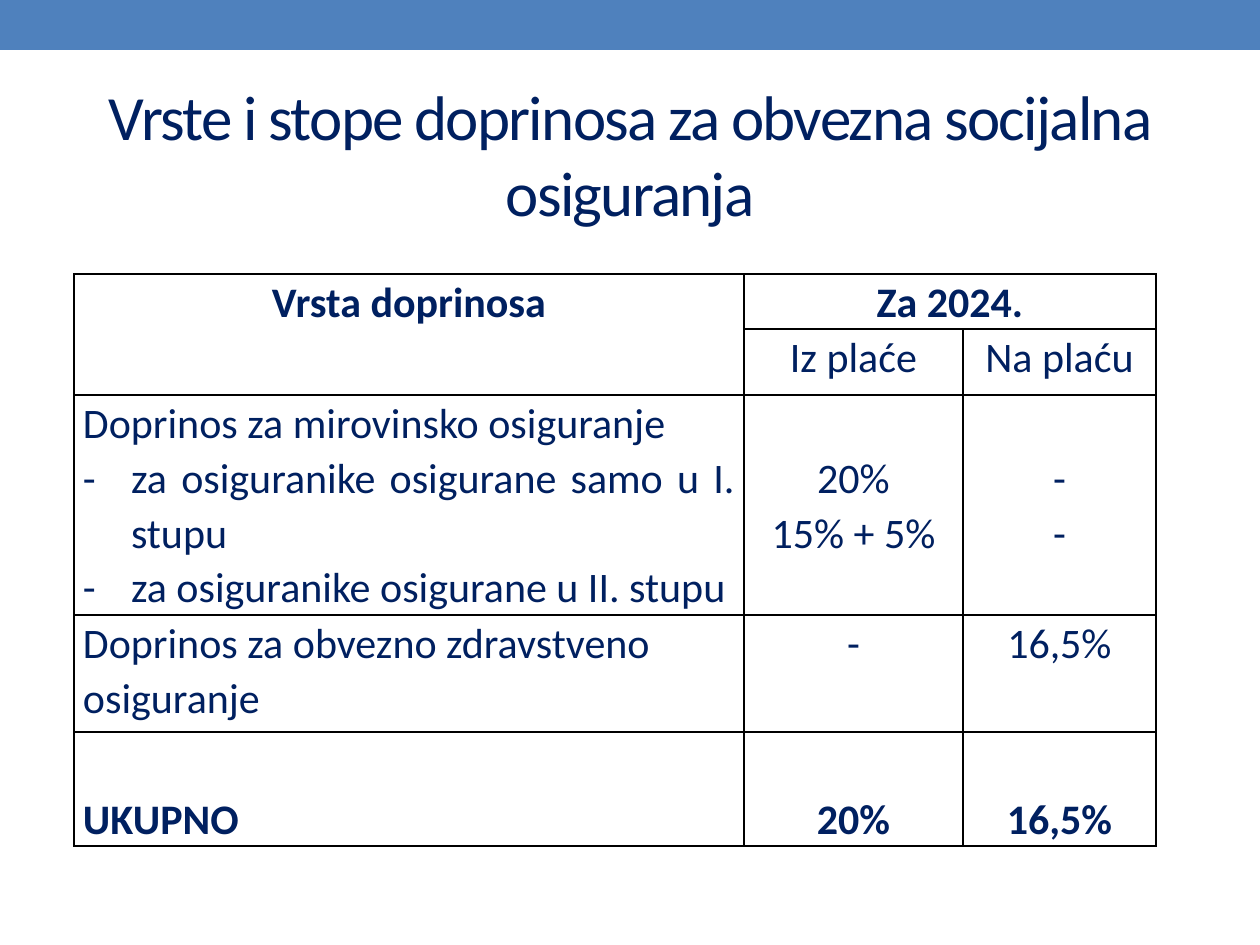
from dataclasses import dataclass

from lxml.etree import SubElement
from pptx import Presentation
from pptx.dml.color import RGBColor
from pptx.enum.shapes import MSO_SHAPE
from pptx.enum.text import MSO_ANCHOR, MSO_AUTO_SIZE, PP_ALIGN
from pptx.oxml.ns import qn
from pptx.util import Pt

PX = 914400 // 126
BULLET_INDENT = 48
LINE = 55


@dataclass(frozen=True)
class Theme:
    font: str = "Calibri"
    ink: str = "002060"
    accent: str = "4F81BD"
    border: str = "000000"
    title_size: int = 36
    table_size: int = 24
    line_spacing: float = 1.07


@dataclass(frozen=True)
class Entry:
    lines: tuple
    bold: bool = False
    align: PP_ALIGN = PP_ALIGN.CENTER
    bulleted_from: int = 99
    top: int = 0
    anchor: MSO_ANCHOR = MSO_ANCHOR.TOP


class SlideBuilder:
    def __init__(self, slide, theme):
        self.slide = slide
        self.theme = theme

    def style(self, paragraph, size, bold=False):
        font = paragraph.font
        font.name = self.theme.font
        font.size = Pt(size)
        font.bold = bold
        font.color.rgb = RGBColor.from_string(self.theme.ink)

    def band(self, left, top, width, height):
        band = self.slide.shapes.add_shape(
            MSO_SHAPE.RECTANGLE, left * PX, top * PX, width * PX, height * PX)
        band.shadow.inherit = False
        band.fill.solid()
        band.fill.fore_color.rgb = RGBColor.from_string(self.theme.accent)
        band.line.fill.background()

    def title(self, text, left, top, width, height):
        title = self.slide.shapes.title
        title.left, title.top = left * PX, top * PX
        title.width, title.height = width * PX, height * PX
        frame = title.text_frame
        frame.text = text
        frame.word_wrap = True
        frame.auto_size = MSO_AUTO_SIZE.NONE
        frame.vertical_anchor = MSO_ANCHOR.MIDDLE
        heading = frame.paragraphs[0]
        heading.alignment = PP_ALIGN.CENTER
        self.style(heading, self.theme.title_size)
        heading._p.pPr.find(qn("a:defRPr")).set("spc", "-100")

    def bullet(self, paragraph):
        properties = paragraph._p.get_or_add_pPr()
        properties.set("marL", str(BULLET_INDENT * PX))
        properties.set("indent", str(-BULLET_INDENT * PX))
        SubElement(properties, qn("a:buFont"), typeface=self.theme.font)
        SubElement(properties, qn("a:buChar"), char="-")

    def borders(self, cell):
        properties = cell._tc.get_or_add_tcPr()
        for side in ("lnL", "lnR", "lnT", "lnB"):
            edge = SubElement(properties, qn(f"a:{side}"), w=str(Pt(1)))
            fill = SubElement(edge, qn("a:solidFill"))
            SubElement(fill, qn("a:srgbClr"), val=self.theme.border)

    def fill_cell(self, cell, entry):
        cell.margin_left = cell.margin_right = 9 * PX
        cell.margin_top, cell.margin_bottom = entry.top * PX, 0
        cell.vertical_anchor = entry.anchor
        frame = cell.text_frame
        for index, line in enumerate(entry.lines):
            paragraph = frame.add_paragraph() if index else frame.paragraphs[0]
            paragraph.text = line
            paragraph.alignment = entry.align
            if index >= entry.bulleted_from:
                self.bullet(paragraph)
                paragraph.alignment = PP_ALIGN.JUSTIFY
            paragraph.line_spacing = self.theme.line_spacing
            self.style(paragraph, self.theme.table_size, entry.bold)

    def table(self, left, top, columns, heights, rows, merges):
        table = self.slide.shapes.add_table(
            len(heights), len(columns), left * PX, top * PX,
            sum(columns) * PX, sum(heights) * PX).table
        table.first_row = table.horz_banding = False
        for column, width in zip(table.columns, columns):
            column.width = width * PX
        for row, height in zip(table.rows, heights):
            row.height = height * PX
        for r, entries in enumerate(rows):
            for c, entry in enumerate(entries):
                cell = table.cell(r, c)
                self.borders(cell)
                cell.fill.background()
                if entry:
                    self.fill_cell(cell, entry)
        for start, end in merges:
            table.cell(*start).merge(table.cell(*end))


def total(text, align=PP_ALIGN.CENTER):
    return Entry((text,), bold=True, align=align, anchor=MSO_ANCHOR.BOTTOM)


def main():
    presentation = Presentation()
    presentation.slide_width, presentation.slide_height = 1260 * PX, 945 * PX
    slide = presentation.slides.add_slide(presentation.slide_layouts[5])
    builder = SlideBuilder(slide, Theme())
    builder.band(0, 0, 1260, 50)
    builder.title("Vrste i stope doprinosa za obvezna socijalna osiguranja",
                  63, 73, 1134, 161)

    left = PP_ALIGN.LEFT
    pension = Entry(("Doprinos za mirovinsko osiguranje",
                     "za osiguranike osigurane samo u I. stupu",
                     "za osiguranike osigurane u II. stupu"),
                    align=left, bulleted_from=1)
    health = Entry(("Doprinos za obvezno zdravstveno osiguranje",), align=left)
    rows = [
        [Entry(("Vrsta doprinosa",), bold=True),
         Entry(("Za 2024.",), bold=True), None],
        [None, Entry(("Iz plaće",)), Entry(("Na plaću",))],
        [pension, Entry(("20%", "15% + 5%"), top=LINE),
         Entry(("-", "-"), top=LINE)],
        [health, Entry(("-",)), Entry(("16,5%",))],
        [total("UKUPNO", left), total("20%"), total("16,5%")],
    ]
    builder.table(74, 274, (670, 219, 193), (LINE, 66, 4 * LINE, 117, 114),
                  rows, [((0, 0), (1, 0)), ((0, 1), (0, 2))])
    presentation.save("out.pptx")


if __name__ == "__main__":
    main()
